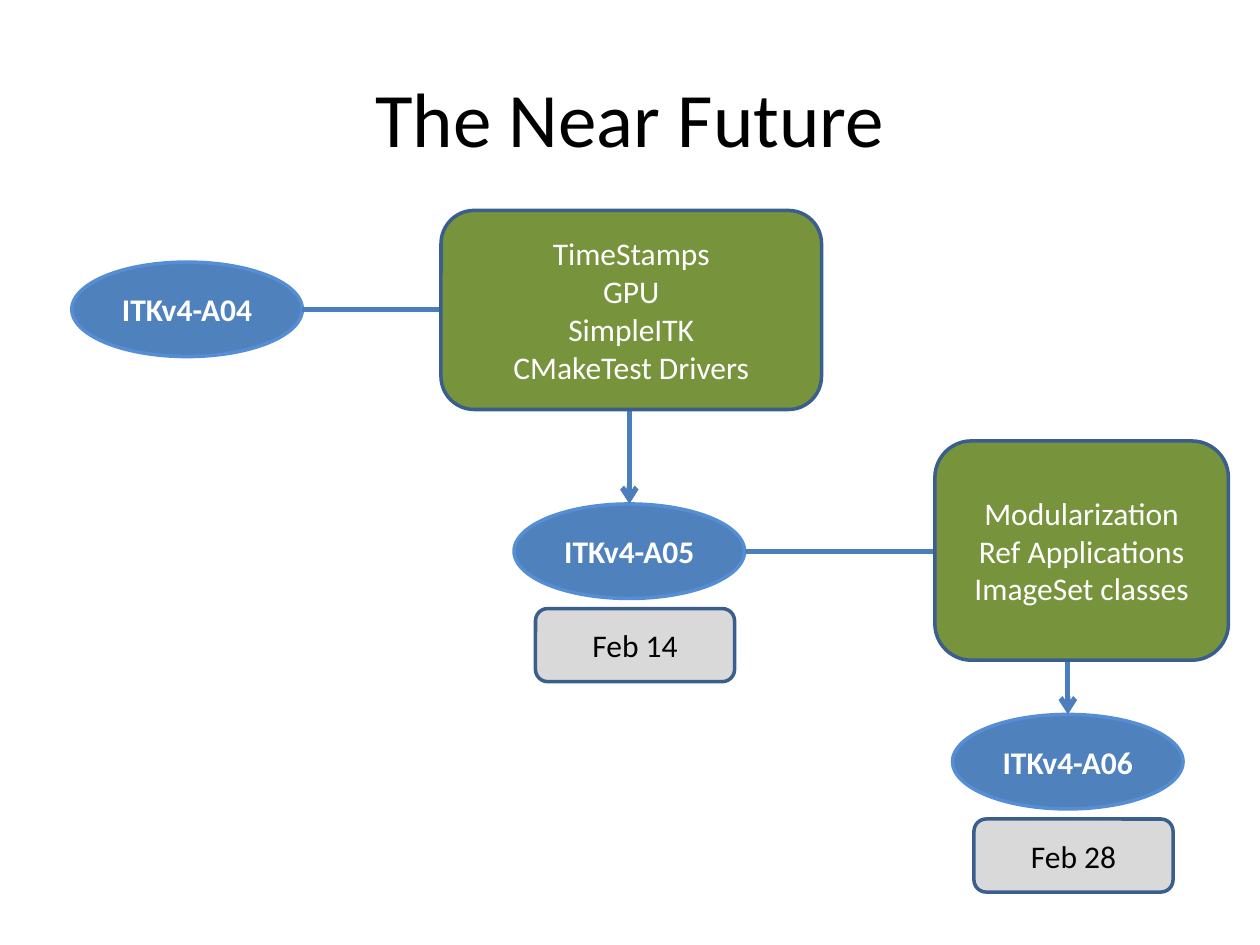
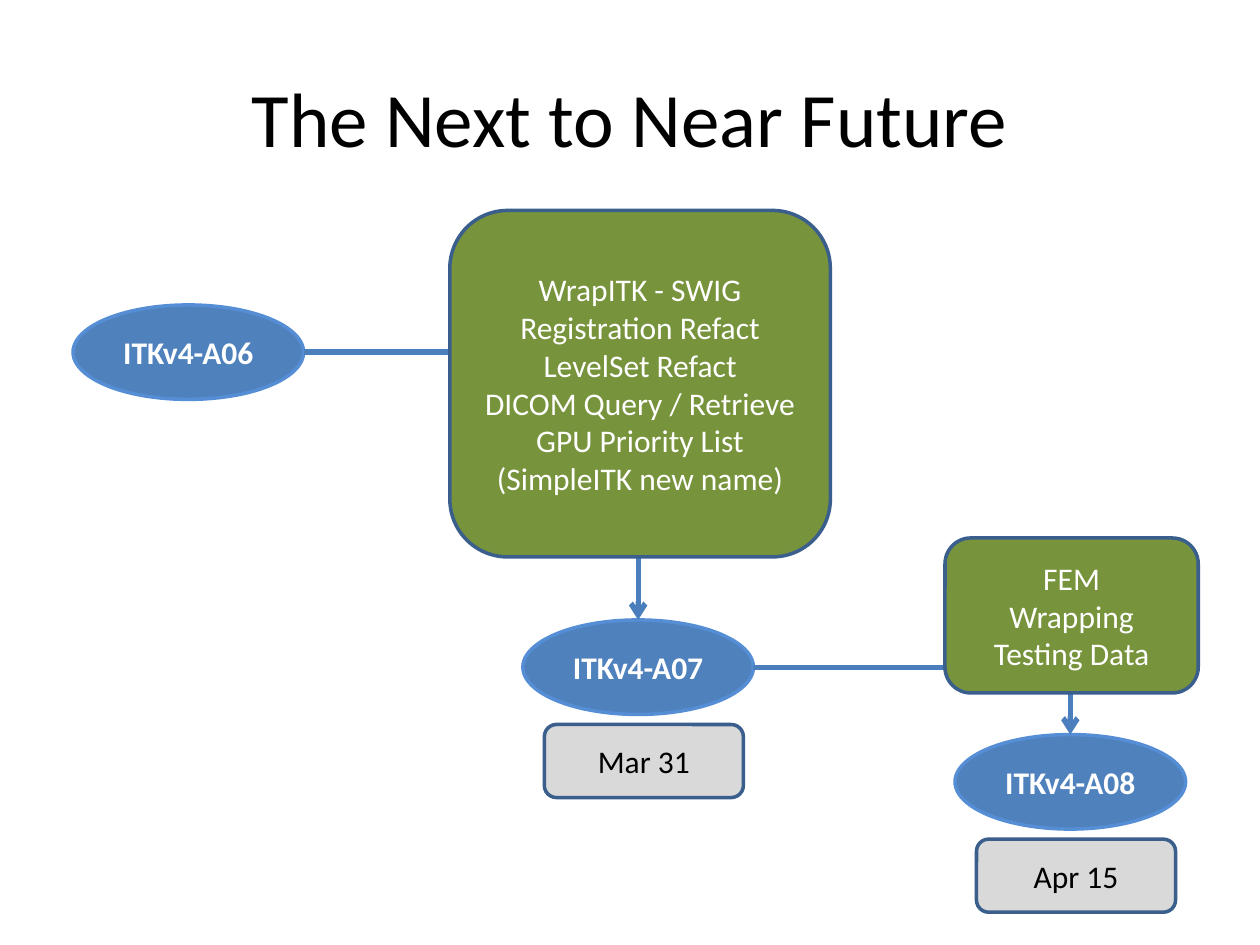
import pptx
import pptx.dml.color
import pptx.enum.shapes
import pptx.enum.text
import pptx.oxml.ns
import pptx.util
from lxml import etree
from pptx.util import Inches

COLORS = {
    "title": "000000",
    "milestone": "4F81BD",
    "milestone_line": "558ED5",
    "tasks": "77933C",
    "date": "D9D9D9",
    "box_line": "3A5F8C",
    "arrow": "4B7EBC",
    "light_text": "FFFFFF",
    "dark_text": "000000",
}
FONT = "Calibri"
MILESTONE_WIDTH, MILESTONE_HEIGHT = 1.83, 0.75
DATE_WIDTH, DATE_HEIGHT = 1.58, 0.58
DATE_OFFSET_X, DATE_OFFSET_Y = 0.17, 0.83
ELLIPSE_RIGHT, ELLIPSE_TOP = 6, 0  # connection sites of an ellipse

# Milestones: name, left, top, date. Task boxes: left, top, width, height, lines.
ROADMAPS = [
    {
        "title": "The Near Future",
        "milestones": [
            ("ITKv4-A04", 0.57, 2.08, None),
            ("ITKv4-A05", 4.08, 4.00, "Feb 14"),
            ("ITKv4-A06", 7.56, 5.67, "Feb 28"),
        ],
        "tasks": [
            (3.5, 1.67, 3.02, 1.58,
             ["TimeStamps", "GPU", "SimpleITK", "CMakeTest Drivers"]),
            (7.42, 3.5, 2.33, 1.74,
             ["Modularization", "Ref Applications", "ImageSet classes"]),
        ],
    },
    {
        "title": "The Next to Near Future",
        "milestones": [
            ("ITKv4-A06", 0.58, 2.42, None),
            ("ITKv4-A07", 4.15, 4.92, "Mar 31"),
            ("ITKv4-A08", 7.58, 5.83, "Apr 15"),
        ],
        "tasks": [
            (3.57, 1.67, 3.02, 2.75,
             ["WrapITK - SWIG", "Registration Refact", "LevelSet Refact",
              "DICOM Query / Retrieve", "GPU Priority List",
              "(SimpleITK new name)"]),
            (7.5, 4.27, 2.01, 1.23, ["FEM", "Wrapping", "Testing Data"]),
        ],
    },
]


def rgb(name):
    return pptx.dml.color.RGBColor.from_string(COLORS[name])


class RoadmapDeck:
    """Holds the shared style and the slide being drawn."""

    def __init__(self):
        self.presentation = pptx.Presentation()
        self.presentation.slide_width = Inches(10)
        self.presentation.slide_height = Inches(7.5)
        self.slide = None

    def add_slide(self, title):
        layout = self.presentation.slide_layouts[5]
        self.slide = self.presentation.slides.add_slide(layout)
        shape = self.slide.shapes.title
        shape.left, shape.top = Inches(0.5), Inches(0.3)
        shape.width, shape.height = Inches(9), Inches(1.25)
        self.add_lines(shape, [title], 44, "title")

    def add_lines(self, shape, lines, size, color, bold=False):
        frame = shape.text_frame
        frame.word_wrap = True
        frame.vertical_anchor = pptx.enum.text.MSO_ANCHOR.MIDDLE
        for index, line in enumerate(lines):
            paragraph = frame.add_paragraph() if index else frame.paragraphs[0]
            paragraph.alignment = pptx.enum.text.PP_ALIGN.CENTER
            run = paragraph.add_run()
            run.text = line
            run.font.name = FONT
            run.font.size = pptx.util.Pt(size)
            run.font.bold = bold
            run.font.color.rgb = rgb(color)

    def add_shape(self, kind, left, top, width, height, fill, line):
        shape = self.slide.shapes.add_shape(
            kind, Inches(left), Inches(top), Inches(width), Inches(height))
        shape.shadow.inherit = False
        shape.fill.solid()
        shape.fill.fore_color.rgb = rgb(fill)
        shape.line.color.rgb = rgb(line)
        shape.line.width = pptx.util.Pt(2)
        return shape

    def add_milestone(self, name, left, top):
        shape = self.add_shape(
            pptx.enum.shapes.MSO_SHAPE.OVAL, left, top,
            MILESTONE_WIDTH, MILESTONE_HEIGHT, "milestone", "milestone_line")
        self.add_lines(shape, [name], 18, "light_text", bold=True)
        return shape

    def add_box(self, left, top, width, height, lines, fill, text_color):
        shape = self.add_shape(
            pptx.enum.shapes.MSO_SHAPE.ROUNDED_RECTANGLE,
            left, top, width, height, fill, "box_line")
        self.add_lines(shape, lines, 18, text_color)

    def add_elbow_arrow(self, source, target):
        """Run right from the source, then down to the top of the target."""
        connector = self.slide.shapes.add_connector(
            pptx.enum.shapes.MSO_CONNECTOR.ELBOW,
            source.left + source.width, source.top + source.height // 2,
            target.left + target.width // 2, target.top)
        connector.line.color.rgb = rgb("arrow")
        connector.line.width = pptx.util.Pt(3)

        # A single bend, an arrowhead and no shadow
        qn = pptx.oxml.ns.qn
        element = connector._element
        element.find(".//" + qn("a:prstGeom")).set("prst", "bentConnector2")
        line = element.find(".//" + qn("a:ln"))
        etree.SubElement(line, qn("a:tailEnd"), type="arrow")
        etree.SubElement(element.spPr, qn("a:effectLst"))

        # begin_connect knows only four sites, an ellipse has eight
        joints = element.find(".//" + qn("p:cNvCxnSpPr"))
        etree.SubElement(joints, qn("a:stCxn"),
                         id=str(source.shape_id), idx=str(ELLIPSE_RIGHT))
        connector.end_connect(target, ELLIPSE_TOP)

    def add_roadmap(self, roadmap):
        self.add_slide(roadmap["title"])

        # Milestones, each joined to the one before it
        previous = None
        for name, left, top, _ in roadmap["milestones"]:
            milestone = self.add_milestone(name, left, top)
            if previous is not None:
                self.add_elbow_arrow(previous, milestone)
            previous = milestone

        # Task boxes over the arrows
        for left, top, width, height, lines in roadmap["tasks"]:
            self.add_box(left, top, width, height, lines, "tasks", "light_text")

        # Due dates below the milestones
        for _, left, top, date in roadmap["milestones"]:
            if date:
                self.add_box(left + DATE_OFFSET_X, top + DATE_OFFSET_Y,
                             DATE_WIDTH, DATE_HEIGHT, [date], "date", "dark_text")


def main():
    deck = RoadmapDeck()
    for roadmap in ROADMAPS:
        deck.add_roadmap(roadmap)
    deck.presentation.save("out.pptx")


if __name__ == "__main__":
    main()
